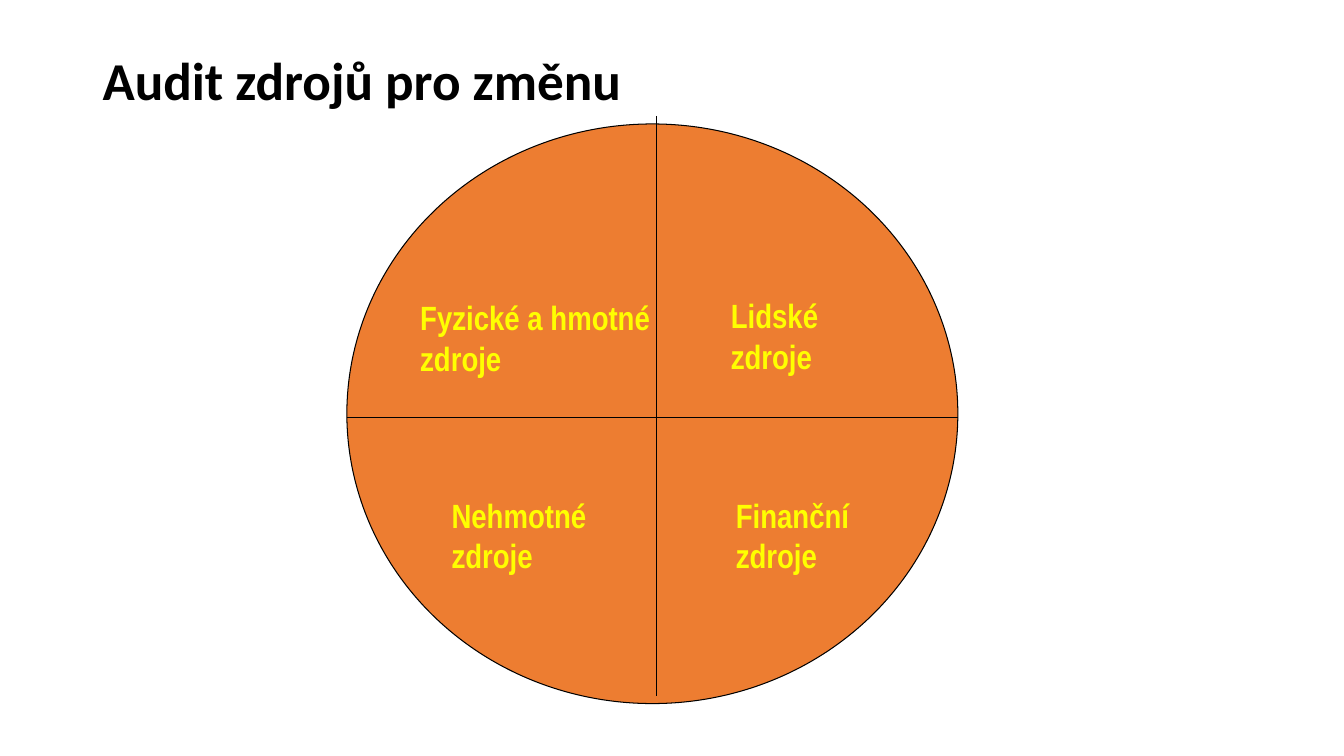
import pptx
import pptx.util
import pptx.dml.color
import pptx.enum.shapes
import pptx.enum.text
import pptx.oxml

HUES = {"ink": "000000", "disc": "ED7D31", "label": "FFFF00"}
HEAD = {"name": "Calibri", "size": pptx.util.Pt(38), "bold": True}
LABEL = {"name": "Arial Narrow", "size": pptx.util.Pt(24), "bold": True}
FIT = pptx.enum.text.MSO_AUTO_SIZE.SHAPE_TO_FIT_TEXT


def style(item, values):
    for name, value in values.items():
        setattr(item, name, value)


def hue(name):
    return pptx.dml.color.RGBColor.from_string(HUES[name])


class Board:
    """Draws on one slide; lengths are percentages of its width and height."""

    def __init__(self, deck):
        self.wide, self.high = deck.slide_width, deck.slide_height
        self.shapes = deck.slides.add_slide(deck.slide_layouts[6]).shapes

    def scale(self, *sides):
        """Turn alternating x and y shares into lengths."""
        return [round(side * (self.high if i % 2 else self.wide) / 100)
                for i, side in enumerate(sides)]

    def text(self, place, lines, font, color, frame, para=None):
        box = self.shapes.add_textbox(*self.scale(*place)).text_frame
        style(box, frame)
        box.text = "\n".join(lines)
        for part in box.paragraphs:
            style(part, para or {})
            for run in part.runs:
                style(run.font, font)
                run.font.color.rgb = hue(color)

    def disc(self, place):
        kind = pptx.enum.shapes.MSO_SHAPE.OVAL
        disc = self.shapes.add_shape(kind, *self.scale(*place))
        disc.shadow.inherit = False
        disc.fill.solid()
        disc.fill.fore_color.rgb = hue("disc")
        disc.line.color.rgb = hue("ink")
        disc.line.width = pptx.util.Pt(0.75)

    def line(self, ends):
        kind = pptx.enum.shapes.MSO_CONNECTOR.STRAIGHT
        line = self.shapes.add_connector(kind, *self.scale(*ends))
        line.line.color.rgb = hue("ink")
        line.line.width = pptx.util.Pt(1)
        line._element.spPr.append(pptx.oxml.parse_xml(
            '<a:effectLst xmlns:a="http://schemas.openxmlformats.org/'
            'drawingml/2006/main"/>'))


def main():
    deck = pptx.Presentation()
    style(deck, {"slide_width": pptx.util.Inches(13.33),
                 "slide_height": pptx.util.Inches(7.5)})
    board = Board(deck)

    board.text((6.9, 5.33, 86.27, 19.33), ["Audit zdrojů pro změnu"],
               HEAD, "ink",
               {"word_wrap": True, "margin_top": pptx.util.Inches(0.14)},
               {"line_spacing": 0.9})

    left, width = 25.81, 45.46
    board.disc((left, 16.4, width, 76.67))
    board.line((48.84, 15.33, 48.84, 92))
    board.line((left, 55.2, left + width, 55.2))

    for x, y, span, word in (
        (30.53, 38.67, 18.83, "Fyzické a hmotné"),
        (53.64, 38.4, 8.1, "Lidské"),
        (32.86, 64.8, 11.63, "Nehmotné"),
        (54.01, 64.8, 10.05, "Finanční"),
    ):
        board.text((x, y, span, 12.13), [word, "zdroje"], LABEL, "label",
                   {"word_wrap": False, "auto_size": FIT})

    deck.save("out.pptx")


if __name__ == "__main__":
    main()
